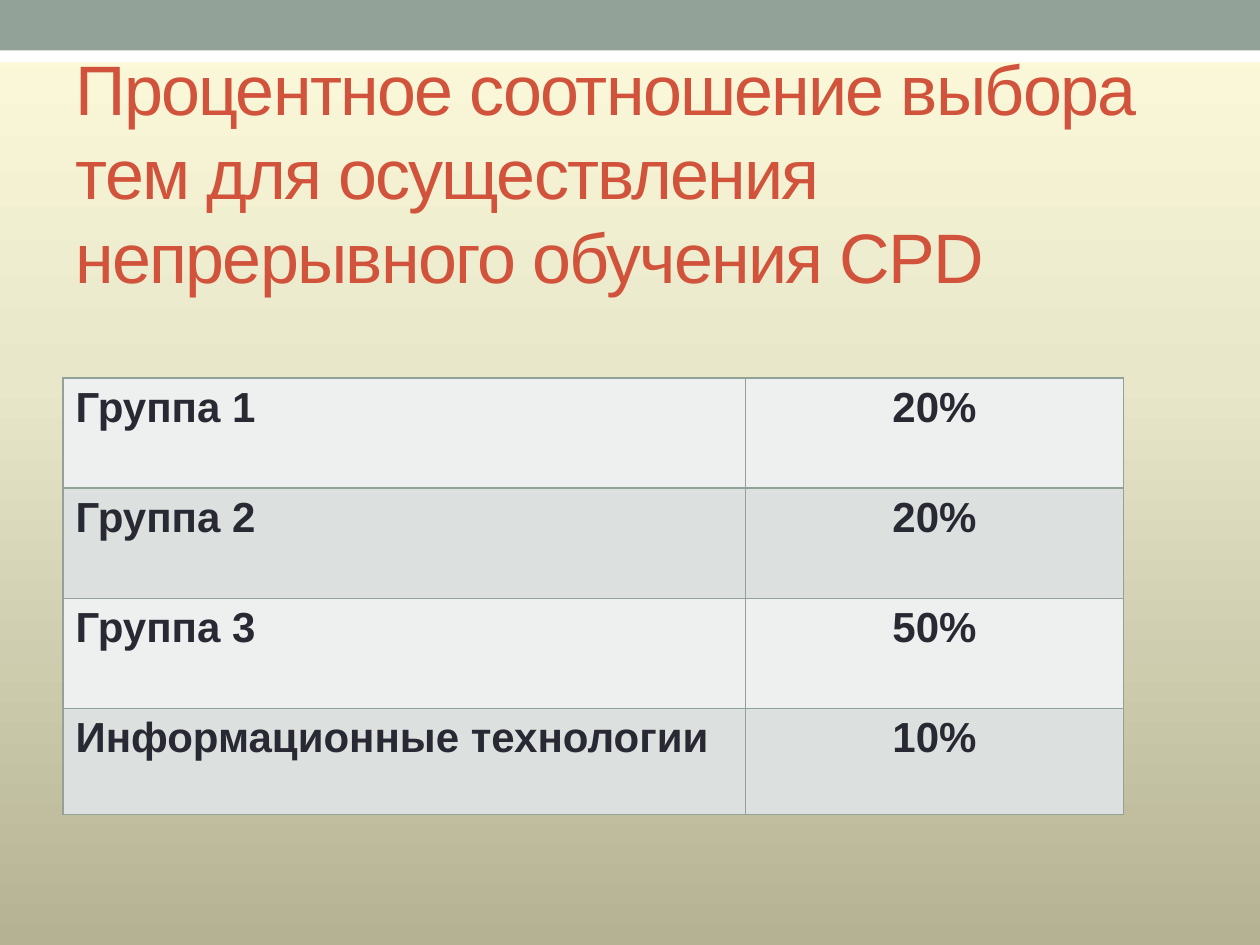
from copy import deepcopy
from pptx import Presentation
from pptx.dml.color import RGBColor
from pptx.enum.shapes import MSO_SHAPE
from pptx.enum.text import MSO_ANCHOR, MSO_AUTO_SIZE, PP_ALIGN
from pptx.oxml import parse_xml
from pptx.oxml.ns import nsdecls
from pptx.util import Pt

WHITE = RGBColor(0xFF, 0xFF, 0xFF)
SAGE = RGBColor(0x93, 0xA2, 0x99)
RED = RGBColor(0xD2, 0x53, 0x3C)
INK = RGBColor(0x29, 0x29, 0x34)
BANDS = (RGBColor(0xEE, 0xF0, 0xEF), RGBColor(0xDC, 0xE0, 0xDE))
STOPS = (
    (0, RGBColor(0xFD, 0xFB, 0xDA)),
    (0.4, RGBColor(0xE8, 0xE7, 0xCA)),
    (1, RGBColor(0xB4, 0xB2, 0x93)),
)
TITLE = "Процентное соотношение выбора тем для осуществления непрерывного обучения CPD"
ROWS = (
    ("Группа 1", "20%"),
    ("Группа 2", "20%"),
    ("Группа 3", "50%"),
    ("Информационные технологии", "10%"),
)
HEIGHTS = (63, 63, 63, 60.5)


def apply(target, values):
    for name, value in values.items():
        setattr(target, name, value)


def place(shape, box):
    names = ("left", "top", "width", "height")
    apply(shape, dict(zip(names, map(Pt, box))))


def add_back(slide):
    fill = slide.background.fill
    fill.gradient()
    fill.gradient_angle = 270
    grad = slide.background._cSld.find(".//{*}gsLst")
    grad.append(deepcopy(grad[0]))
    for stop, (pos, color) in zip(fill.gradient_stops, STOPS):
        stop.position = pos
        stop.color.rgb = color


def add_bar(slide, box, color, order):
    bar = slide.shapes.add_shape(MSO_SHAPE.RECTANGLE, *map(Pt, box))
    bar.shadow.inherit = False
    bar.fill.solid()
    bar.fill.fore_color.rgb = color
    bar.line.fill.background()
    slide.shapes._spTree.insert(2 + order, bar._element)


def add_title(slide, box):
    title = slide.shapes.title
    place(title, box)
    frame = title.text_frame
    frame.text = TITLE
    apply(frame, {
        "word_wrap": True,
        "auto_size": MSO_AUTO_SIZE.NONE,
        "vertical_anchor": MSO_ANCHOR.MIDDLE,
    })
    para = frame.paragraphs[0]
    apply(para, {"alignment": PP_ALIGN.LEFT, "line_spacing": Pt(48)})
    run = para.runs[0]
    apply(run.font, {"name": "Arial", "size": Pt(40)})
    run.font.color.rgb = RED
    run._r.get_or_add_rPr().set("spc", "-100")


def add_edges(cell):
    props = cell._tc.get_or_add_tcPr()
    for order, side in enumerate(("lnL", "lnR", "lnT", "lnB")):
        props.insert(order, parse_xml(
            f'<a:{side} {nsdecls("a")} w="{Pt(1)}"><a:solidFill>'
            f'<a:srgbClr val="{SAGE}"/></a:solidFill></a:{side}>'))


def fill_cell(cell, text, color, align):
    cell.text = text
    cell.fill.solid()
    cell.fill.fore_color.rgb = color
    para = cell.text_frame.paragraphs[0]
    para.alignment = align
    font = para.runs[0].font
    apply(font, {"name": "Arial", "size": Pt(24), "bold": True})
    font.color.rgb = INK
    add_edges(cell)


def add_grid(slide, box, split):
    table = slide.shapes.add_table(len(ROWS), 2, *map(Pt, box)).table
    apply(table, {"first_row": False, "horz_banding": False})
    table.columns[0].width = Pt(split)
    table.columns[1].width = Pt(box[2] - split)
    for i, (row, height) in enumerate(zip(ROWS, HEIGHTS)):
        table.rows[i].height = Pt(height)
        for j, align in enumerate((PP_ALIGN.LEFT, PP_ALIGN.CENTER)):
            fill_cell(table.cell(i, j), row[j], BANDS[i % 2], align)


def main():
    deck = Presentation()
    apply(deck, {"slide_width": Pt(720), "slide_height": Pt(540)})
    slide = deck.slides.add_slide(deck.slide_layouts[5])
    add_back(slide)
    add_bar(slide, (0, 17.5, 720, 18), WHITE, 0)
    add_bar(slide, (0, 0, 720, 28.8), SAGE, 1)
    add_title(slide, (36, 21.6, 648, 152.6))
    add_grid(slide, (36, 216, 606, sum(HEIGHTS)), 390)
    deck.save("out.pptx")


if __name__ == "__main__":
    main()
